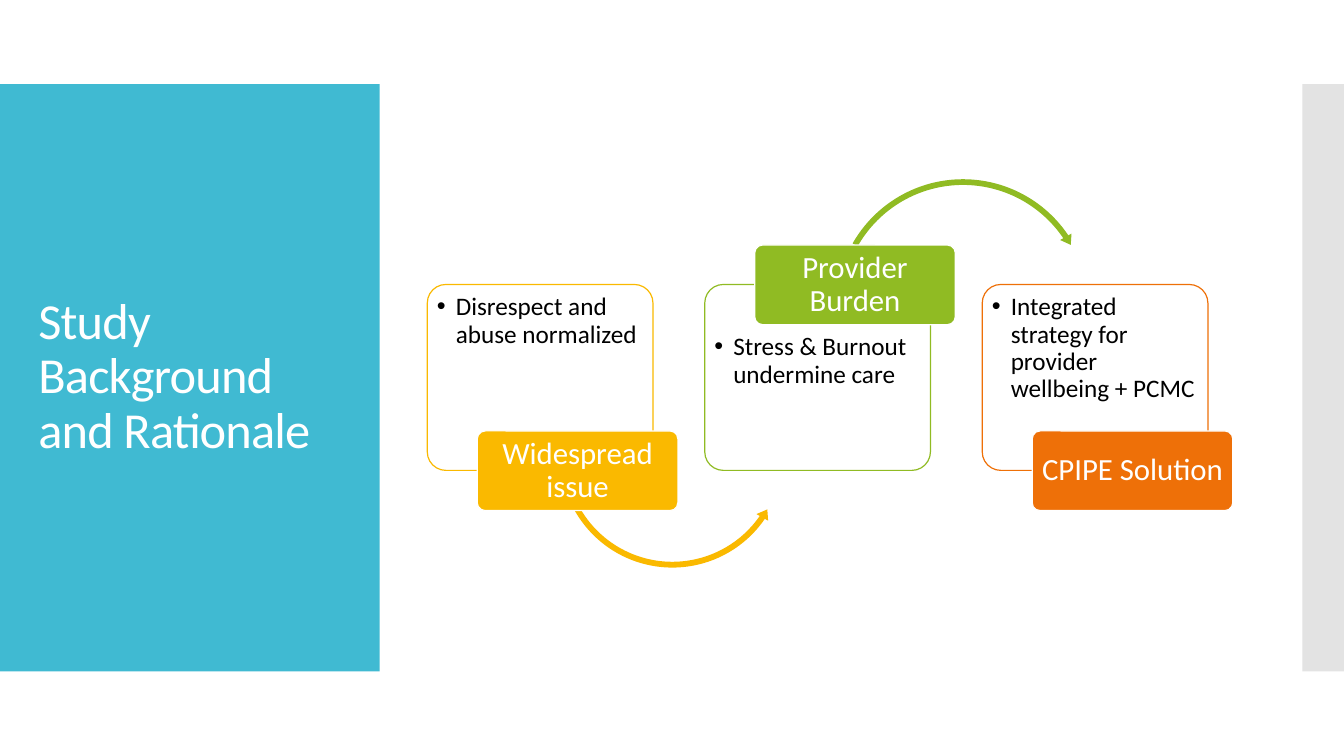
from lxml.etree import SubElement
from pptx import Presentation
from pptx.dml.color import RGBColor
from pptx.enum.shapes import MSO_SHAPE
from pptx.enum.text import MSO_ANCHOR, MSO_AUTO_SIZE, PP_ALIGN
from pptx.oxml.ns import qn
from pptx.util import Pt

WHITE = "FFFFFF"


def add(kind, box, fill, line=None):
    shape = slide.shapes.add_shape(kind, *map(Pt, box))
    shape.shadow.inherit = False
    shape.fill.solid()
    shape.fill.fore_color.rgb = RGBColor.from_string(fill)
    if line:
        shape.line.color.rgb = RGBColor.from_string(line)
        shape.line.width = Pt(0.85)
    else:
        shape.line.fill.background()
    return shape


def write(shape, text, size, color, align, frame):
    body = shape.text_frame
    body.text = text
    for name, value in frame.items():
        setattr(body, name, value)
    par = body.paragraphs[0]
    par.alignment, par.line_spacing = align, 0.9
    font = par.runs[0].font
    font.name, font.size = "Calibri", Pt(size)
    font.color.rgb = RGBColor.from_string(color)
    return par


deck = Presentation()
deck.slide_width, deck.slide_height = Pt(960), Pt(540)
slide = deck.slides.add_slide(deck.slide_layouts[5])

# Side panels
add(MSO_SHAPE.RECTANGLE, (0, 60, 271.2, 419.5), "40BAD2")
add(MSO_SHAPE.RECTANGLE, (930.2, 60, 29.8, 419.5), "E3E3E3")

# Title, brought in front of its panel
title = slide.shapes.title
slide.shapes._spTree.append(title._element)
place = {"left": 20.2, "top": 88.6, "width": 231.8, "height": 362.2}
for name, value in place.items():
    setattr(title, name, Pt(value))
head = write(title, "Study Background and Rationale", 36, WHITE, PP_ALIGN.LEFT, {
    "vertical_anchor": MSO_ANCHOR.MIDDLE,
    "auto_size": MSO_AUTO_SIZE.NONE,
    "word_wrap": True,
})
head.runs[0].font._element.set("spc", "-60")

# Steps: label, detail, color, label top, top inset of the detail
steps = [
    ("Widespread issue", "Disrespect and abuse normalized", "FAB900", 307.8, 3),
    ("Provider Burden", "Stress & Burnout undermine care", "90BB23", 175, 31.5),
    ("CPIPE Solution", "Integrated strategy for provider wellbeing + PCMC",
     "EE7008", 307.8, 3),
]
# Arrows leading to the next step: kind, left, top, size, adjustments
arrows = [
    (MSO_SHAPE.LEFT_CIRCULAR_ARROW, 397.5, 242.6, 165.6,
     (0.025, 2.967, 20.723, 90.245, 0.029)),
    (MSO_SHAPE.CIRCULAR_ARROW, 594.6, 125.4, 186.5,
     (0.022, 2.623, 195.621, 125.755, 0.025)),
]

for i, (name, detail, color, top, inset) in enumerate(steps):
    left = 305.2 + i * 198.2

    # Card with its bullet
    card = add(MSO_SHAPE.ROUNDED_RECTANGLE, (left, 203.2, 161.2, 132.8), WHITE, color)
    card.adjustments[0] = 0.1
    par = write(card, detail, 18, "000000", PP_ALIGN.LEFT, {
        "vertical_anchor": MSO_ANCHOR.TOP, "word_wrap": True,
        "margin_left": Pt(3), "margin_right": Pt(3),
        "margin_top": Pt(inset), "margin_bottom": Pt(3),
    })
    props = par._p.get_or_add_pPr()
    props.set("marL", str(Pt(13.5)))
    props.set("indent", str(Pt(-13.5)))
    SubElement(props, qn("a:buFont")).set("typeface", "Arial")
    SubElement(props, qn("a:buChar")).set("char", "•")

    # Arrow, tucked under the label
    if i < len(arrows):
        kind, x, y, size, turns = arrows[i]
        arrow = add(kind, (x, y, size, size), color)
        for n, turn in enumerate(turns):
            arrow.adjustments[n] = turn

    # Label
    label = add(MSO_SHAPE.ROUNDED_RECTANGLE, (left + 35.7, top, 143.3, 56.9), color, WHITE)
    label.adjustments[0] = 0.1
    write(label, name, 22, WHITE, PP_ALIGN.CENTER, {
        "vertical_anchor": MSO_ANCHOR.MIDDLE, "word_wrap": True,
        "margin_left": Pt(3.3), "margin_right": Pt(3.3),
        "margin_top": Pt(2.2), "margin_bottom": Pt(2.2),
    })

deck.save("out.pptx")
